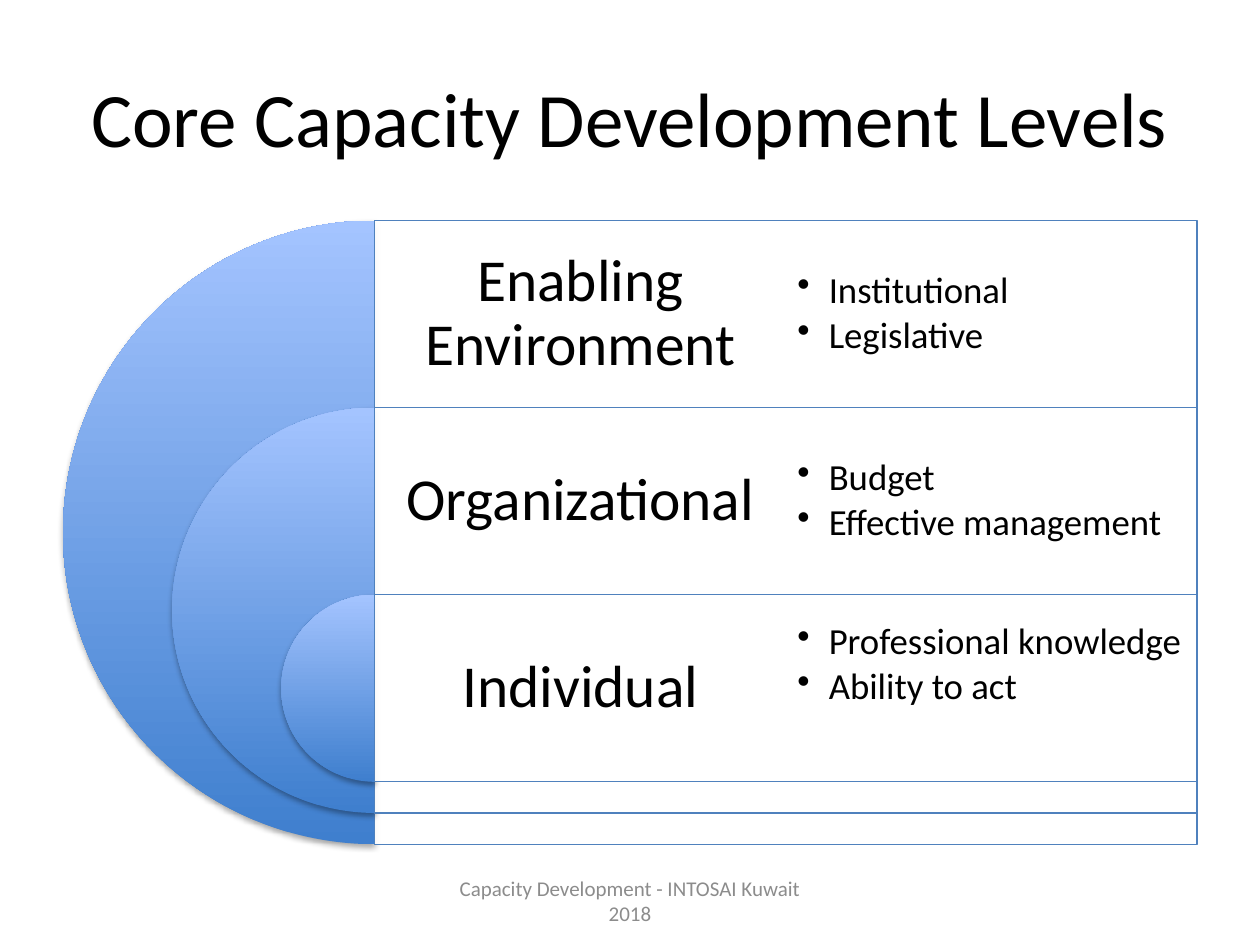
from lxml import etree
from pptx import Presentation
from pptx.dml.color import RGBColor
from pptx.enum.shapes import MSO_SHAPE
from pptx.enum.text import MSO_ANCHOR, PP_ALIGN
from pptx.oxml.ns import qn
from pptx.util import Pt

PIE, RECTANGLE = MSO_SHAPE.PIE, MSO_SHAPE.RECTANGLE
MIDDLE, CENTER, LEFT = MSO_ANCHOR.MIDDLE, PP_ALIGN.CENTER, PP_ALIGN.LEFT

BLACK = RGBColor(0x00, 0x00, 0x00)
WHITE = RGBColor(0xFF, 0xFF, 0xFF)
GRAY = RGBColor(0x8C, 0x8C, 0x8C)
BLUE = RGBColor(0x4F, 0x81, 0xBD)
DARK_BLUE = RGBColor(0x3F, 0x7F, 0xCE)
LIGHT_BLUE = RGBColor(0xA4, 0xC4, 0xFF)

LEVELS = [
    ("Enabling Environment", ["Institutional", "Legislative"], 1),
    ("Organizational", ["Budget", "Effective management"], 0.65),
    ("Individual", ["Professional knowledge", "Ability to act"], 0.3),
]
DISC_LEFT, TOP, DISC = 36, 126, 356.4
ROW = DISC * 0.3
PANEL_LEFT = DISC_LEFT + DISC / 2
PANEL_WIDTH = 684 - PANEL_LEFT
COLUMN = PANEL_WIDTH / 2


def write(sp, lines, size, color=BLACK, align=CENTER, inset=None):
    """Fill a shape with one paragraph per line, centred vertically."""
    tf = sp.text_frame
    tf.word_wrap = True
    tf.vertical_anchor = MIDDLE
    if inset is not None:
        tf.margin_left = tf.margin_right = Pt(inset)
        tf.margin_top = tf.margin_bottom = Pt(inset)
    tf.text = "\n".join(lines)
    for p in tf.paragraphs:
        p.alignment = align
        font = p.runs[0].font
        font.name = "Calibri"
        font.size = Pt(size)
        font.color.rgb = color
    return tf


def add_child(parent, tag, **attributes):
    return etree.SubElement(parent, qn(tag), attributes)


prs = Presentation()
prs.slide_width, prs.slide_height = Pt(720), Pt(540)
s = prs.slides.add_slide(prs.slide_layouts[5])

title = s.shapes.title
title.left, title.top, title.width, title.height = Pt(36), Pt(21.6), Pt(648), Pt(90)
write(title, ["Core Capacity Development Levels"], 44)

# Nested half discs, each with its panel and level name
for i, (name, examples, scale) in enumerate(LEVELS):
    top = TOP + i * ROW
    size = DISC * scale
    half_disc = s.shapes.add_shape(
        PIE, Pt(PANEL_LEFT - size / 2), Pt(top), Pt(size), Pt(size))
    half_disc.adjustments[0] = 54
    half_disc.adjustments[1] = 162
    half_disc.line.fill.background()
    half_disc.fill.gradient()
    half_disc.fill.gradient_angle = 90
    for stop, color in zip(half_disc.fill.gradient_stops, (DARK_BLUE, LIGHT_BLUE)):
        stop.color.rgb = color
    half_disc.shadow.inherit = False
    effects = half_disc.element.spPr.find(qn("a:effectLst"))
    shadow = add_child(effects, "a:outerShdw", blurRad=str(Pt(3.15)),
                       dist=str(Pt(1.8)), dir="5400000", rotWithShape="0")
    shade = add_child(shadow, "a:srgbClr", val="000000")
    add_child(shade, "a:alpha", val="35000")

    panel = s.shapes.add_shape(
        RECTANGLE, Pt(PANEL_LEFT), Pt(top), Pt(PANEL_WIDTH), Pt(size))
    panel.shadow.inherit = False
    panel.fill.solid()
    panel.fill.fore_color.rgb = WHITE
    white = panel.element.spPr.find(qn("a:solidFill")).find(qn("a:srgbClr"))
    add_child(white, "a:alpha", val="90000")
    panel.line.color.rgb = BLUE
    panel.line.width = Pt(0.75)

    label = s.shapes.add_textbox(Pt(PANEL_LEFT), Pt(top), Pt(COLUMN), Pt(ROW))
    tf = write(label, [name], 34, inset=10)
    tf.paragraphs[0].line_spacing = 0.9

# Bulleted examples beside the level names
for i, (name, examples, scale) in enumerate(LEVELS):
    box = s.shapes.add_textbox(
        Pt(PANEL_LEFT + COLUMN), Pt(TOP + i * ROW), Pt(COLUMN), Pt(ROW))
    tf = write(box, examples, 21, align=LEFT, inset=6.5)
    if name == "Individual":
        tf.margin_bottom = Pt(32.5)
    for p in tf.paragraphs:
        p.level = 1
        p.line_spacing = 0.9
        p.space_after = Pt(3.15)
        pPr = p._p.get_or_add_pPr()
        pPr.set("marL", str(Pt(18)))
        pPr.set("indent", str(Pt(-18)))
        add_child(pPr, "a:buChar", char="•")

footer = s.shapes.add_textbox(Pt(246), Pt(500.5), Pt(228), Pt(28.75))
write(footer, ["Capacity Development - INTOSAI Kuwait 2018"], 12, GRAY)

prs.save("out.pptx")
